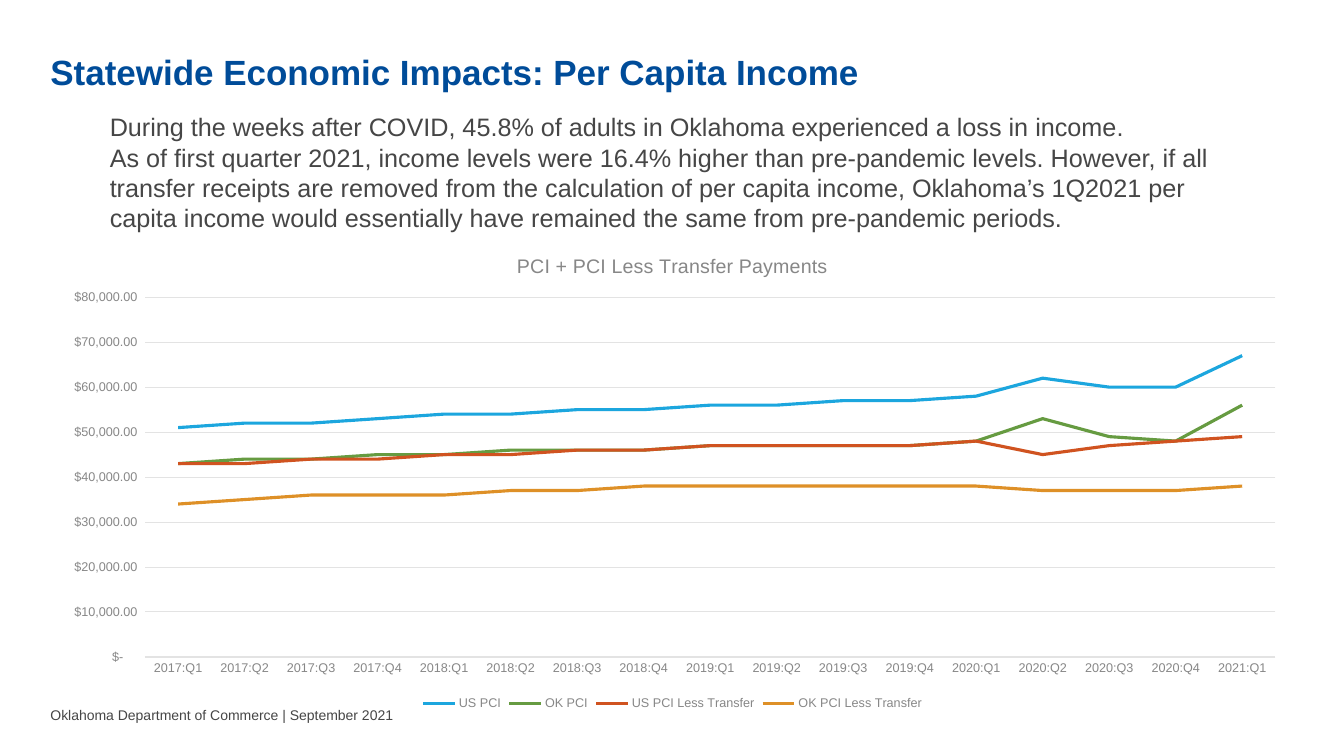
from dataclasses import dataclass

from lxml.etree import SubElement
from pptx import Presentation
from pptx.chart.data import CategoryChartData
from pptx.dml.color import RGBColor
from pptx.enum.chart import XL_CHART_TYPE, XL_LEGEND_POSITION, XL_MARKER_STYLE, XL_TICK_MARK
from pptx.enum.text import MSO_ANCHOR
from pptx.oxml.ns import qn
from pptx.util import Inches, Pt


@dataclass(frozen=True)
class Theme:
    """Colours, type sizes and line widths of the slide."""
    font: str = "Arial"
    heading: str = "004C99"
    body: str = "464646"
    muted: str = "878787"
    grid: str = "E3E3E3"
    heading_size: float = 25
    body_size: float = 18
    chart_title_size: float = 14
    footer_size: float = 10
    label_size: float = 9
    grid_width: float = 0.75
    series_width: float = 2.25


THEME = Theme()
QUARTERS = [f"{year}:Q{quarter}" for year in range(2017, 2022)
            for quarter in range(1, 5)][:17]
INCOME_THOUSANDS = (
    ("US PCI", "1CA6DE",
     (51, 52, 52, 53, 54, 54, 55, 55, 56, 56, 57, 57, 58, 62, 60, 60, 67)),
    ("OK PCI", "669B41",
     (43, 44, 44, 45, 45, 46, 46, 46, 47, 47, 47, 47, 48, 53, 49, 48, 56)),
    ("US PCI Less Transfer", "D05320",
     (43, 43, 44, 44, 45, 45, 46, 46, 47, 47, 47, 47, 48, 45, 47, 48, 49)),
    ("OK PCI Less Transfer", "DE9027",
     (34, 35, 36, 36, 36, 37, 37, 38, 38, 38, 38, 38, 38, 37, 37, 37, 38)),
)
FINDINGS = (
    "During the weeks after COVID, 45.8% of adults in Oklahoma experienced a loss in income.",
    "As of first quarter 2021, income levels were 16.4% higher than pre-pandemic levels. "
    "However, if all transfer receipts are removed from the calculation of per capita income, "
    "Oklahoma’s 1Q2021 per capita income would essentially have remained the same from "
    "pre-pandemic periods.",
)
DOLLARS = '_("$"* #,##0.00_);_("$"* \\(#,##0.00\\);_("$"* "-"??_);_(@_)'


def style_font(font, size, color, bold=False):
    """Apply the theme typeface with a size and colour."""
    font.name = THEME.font
    font.size = Pt(size)
    font.bold = bold
    font.color.rgb = RGBColor.from_string(color)


def style_line(line, color, width):
    """Give a line its colour and width."""
    line.color.rgb = RGBColor.from_string(color)
    line.width = Pt(width)


def add_text(slide, box, paragraphs, size, color, bold=False,
             inset=0.1, anchor=MSO_ANCHOR.TOP):
    """Place wrapped paragraphs in a box given in inches."""
    frame = slide.shapes.add_textbox(*map(Inches, box)).text_frame
    frame.word_wrap = True
    frame.margin_left = Inches(inset)
    frame.vertical_anchor = anchor
    for index, wording in enumerate(paragraphs):
        paragraph = frame.add_paragraph() if index else frame.paragraphs[0]
        run = paragraph.add_run()
        run.text = wording
        style_font(run.font, size, color, bold)


def pin_plot(chart, x, y, w, h):
    """Fix the inner plot area as fractions of the chart."""
    plot_area = chart._chartSpace.chart.plotArea
    for old_layout in plot_area.findall(qn("c:layout")):
        plot_area.remove(old_layout)
    layout = SubElement(plot_area, qn("c:layout"))
    plot_area.insert(0, layout)
    manual = SubElement(layout, qn("c:manualLayout"))
    for tag, value in (("layoutTarget", "inner"), ("xMode", "edge"), ("yMode", "edge"),
                       ("x", x), ("y", y), ("w", w), ("h", h)):
        SubElement(manual, qn(f"c:{tag}")).set("val", str(value))


def style_axes(chart):
    """Set the quarter axis and the dollar axis with its gridlines."""
    for axis in (chart.category_axis, chart.value_axis):
        axis.major_tick_mark = XL_TICK_MARK.NONE
        axis.minor_tick_mark = XL_TICK_MARK.NONE
        style_font(axis.tick_labels.font, THEME.label_size, THEME.muted)
    style_line(chart.category_axis.format.line, THEME.grid, THEME.grid_width)
    dollars = chart.value_axis
    dollars.minimum_scale, dollars.maximum_scale, dollars.major_unit = 0, 80000, 10000
    dollars.format.line.fill.background()
    style_line(dollars.major_gridlines.format.line, THEME.grid, THEME.grid_width)
    dollars.tick_labels.number_format = DOLLARS
    dollars.tick_labels.number_format_is_linked = False


def add_income_chart(slide, box):
    """Draw the per capita income lines in a box given in inches."""
    income = CategoryChartData(number_format=DOLLARS)
    income.categories = QUARTERS
    for name, _, thousands in INCOME_THOUSANDS:
        income.add_series(name, [value * 1000 for value in thousands])
    chart = slide.shapes.add_chart(XL_CHART_TYPE.LINE, *map(Inches, box), income).chart
    style_font(chart.font, THEME.footer_size, THEME.body)

    caption = chart.chart_title.text_frame.paragraphs[0].add_run()
    caption.text = "PCI + PCI Less Transfer Payments"
    style_font(caption.font, THEME.chart_title_size, THEME.muted)

    chart.has_legend = True
    chart.legend.position = XL_LEGEND_POSITION.BOTTOM
    chart.legend.include_in_layout = False
    style_font(chart.legend.font, THEME.label_size, THEME.muted)

    style_axes(chart)
    pin_plot(chart, 0.08, 0.13, 0.9, 0.75)
    chart.plots[0].vary_by_categories = False
    for series, (_, color, _) in zip(chart.plots[0].series, INCOME_THOUSANDS):
        series.smooth = False
        series.marker.style = XL_MARKER_STYLE.NONE
        style_line(series.format.line, color, THEME.series_width)


def build_income_slide(presentation):
    """Add the per capita income slide."""
    slide = presentation.slides.add_slide(presentation.slide_layouts[6])
    add_text(slide, (0.5, 0.45, 12.46, 0.92),
             ["Statewide Economic Impacts: Per Capita Income"],
             THEME.heading_size, THEME.heading, bold=True, inset=0)
    add_text(slide, (0.99, 1.06, 11.55, 1.92), FINDINGS, THEME.body_size, THEME.body)
    add_income_chart(slide, (0.44, 2.33, 12.46, 4.76))
    add_text(slide, (0.5, 6.98, 9.25, 0.22),
             ["Oklahoma Department of Commerce | September 2021"],
             THEME.footer_size, THEME.body, inset=0, anchor=MSO_ANCHOR.MIDDLE)


def main():
    """Build and save the presentation."""
    presentation = Presentation()
    presentation.slide_width = Inches(13.33)
    presentation.slide_height = Inches(7.5)
    build_income_slide(presentation)
    presentation.save("out.pptx")


if __name__ == "__main__":
    main()
